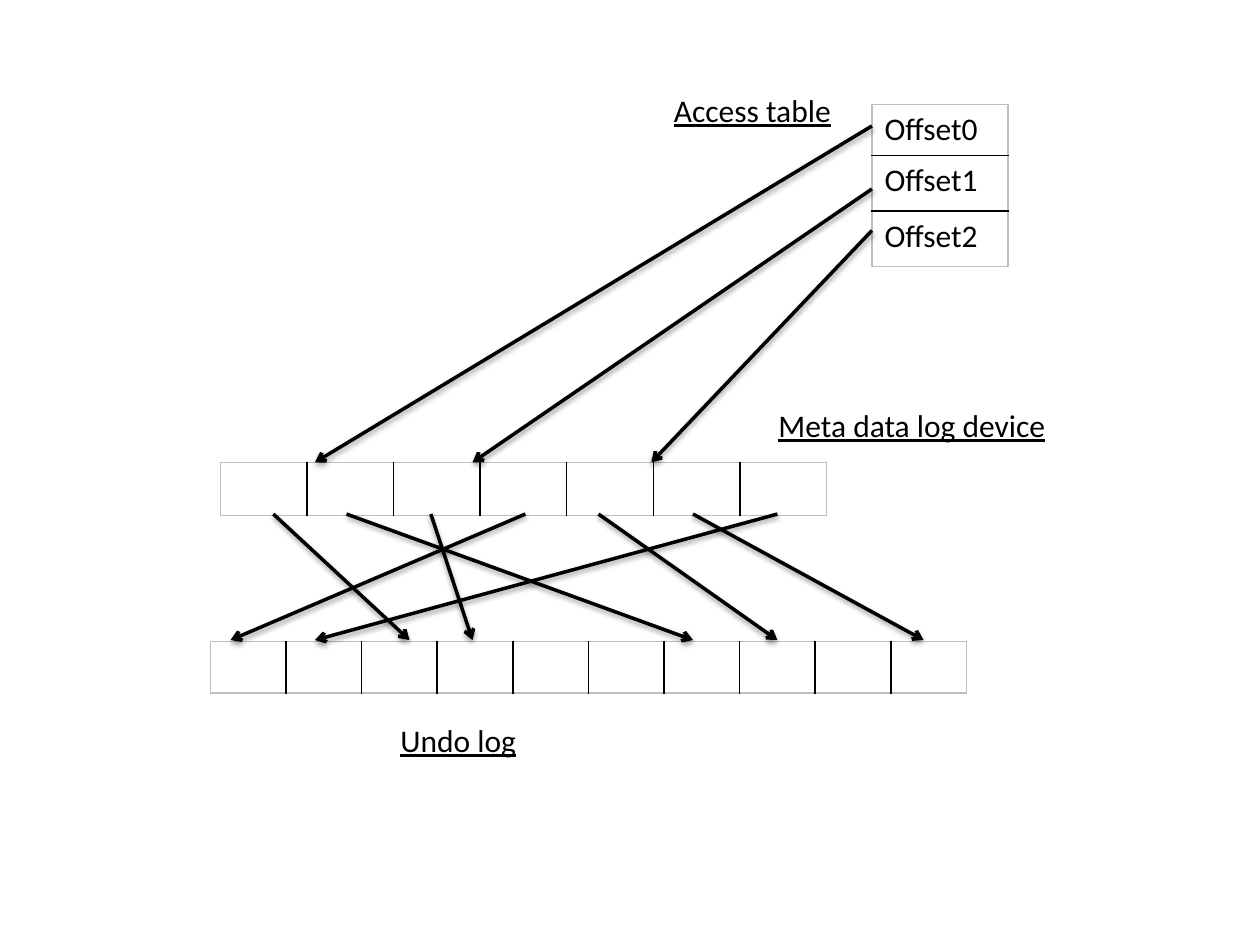
from dataclasses import dataclass

from lxml.etree import SubElement
from pptx import Presentation
from pptx.dml.color import RGBColor
from pptx.enum.shapes import MSO_CONNECTOR
from pptx.oxml import parse_xml
from pptx.oxml.ns import nsdecls, qn
from pptx.util import Inches, Pt


@dataclass(frozen=True)
class Theme:
    font: str = "Calibri"
    size: int = 18
    ink: str = "000000"
    frame: str = "BFBFBF"
    border_width: float = 1
    arrow_width: float = 2


@dataclass(frozen=True)
class Grid:
    left: float
    top: float
    col_width: float
    cols: int
    row_heights: tuple[float, ...]
    labels: tuple[str, ...] = ()


@dataclass(frozen=True)
class Label:
    text: str
    left: float
    top: float
    width: float
    height: float = 0.4


@dataclass(frozen=True)
class Arrow:
    x1: float
    y1: float
    x2: float
    y2: float


THEME = Theme()

ACCESS_TABLE = Grid(6.92, 0.83, 1.08, 1, (0.4, 0.44, 0.44),
                    ("Offset0", "Offset1", "Offset2"))
META_LOG = Grid(1.75, 3.67, 4.81 / 7, 7, (0.42,))
UNDO_LOG = Grid(1.67, 5.09, 0.6, 10, (0.41,))

LABELS = (
    Label("Undo log", 3.08, 5.67, 1.13),
    Label("Meta data log device", 6.08, 3.17, 2.35),
    Label("Access table", 5.25, 0.67, 1.46),
)

# (y at the access table, x at the meta data log)
OFFSET_LINKS = ((1.83, 5.17), (1.5, 3.75), (1, 2.5))
# (x at the meta data log, x at the undo log)
UNDO_LINKS = ((2.17, 3.25), (2.75, 5.5), (3.42, 3.75), (4.17, 1.83),
              (4.75, 6.17), (5.5, 7.33), (6.17, 2.5))
META_BOTTOM, UNDO_TOP = 4.08, 5.08

ARROWS = (
    *(Arrow(ACCESS_TABLE.left, y, x, META_LOG.top) for y, x in OFFSET_LINKS),
    *(Arrow(a, META_BOTTOM, b, UNDO_TOP) for a, b in UNDO_LINKS),
)


def write(tf, text: str, *, underline: bool = False) -> None:
    r = tf.paragraphs[0].add_run()
    r.text = text
    r.font.name = THEME.font
    r.font.size = Pt(THEME.size)
    r.font.color.rgb = RGBColor.from_string(THEME.ink)
    if underline:
        r.font.underline = True


def set_borders(cell, colors: dict[str, str]) -> None:
    """Put border lines, keyed by side (L, R, T, B), ahead of the cell's fill."""
    tc_pr = cell._tc.get_or_add_tcPr()
    for i, (side, color) in enumerate(colors.items()):
        tc_pr.insert(i, parse_xml(
            f'<a:ln{side} {nsdecls("a")} w="{Pt(THEME.border_width)}">'
            f'<a:solidFill><a:srgbClr val="{color}"/></a:solidFill></a:ln{side}>'))


def add_grid(s, grid: Grid) -> None:
    rows = len(grid.row_heights)
    table = s.shapes.add_table(
        rows, grid.cols, Inches(grid.left), Inches(grid.top),
        Inches(grid.col_width * grid.cols), Inches(sum(grid.row_heights))).table
    table.first_row = table.horz_banding = False
    for col in table.columns:
        col.width = Inches(grid.col_width)
    for i, height in enumerate(grid.row_heights):
        table.rows[i].height = Inches(height)
        for j in range(grid.cols):
            cell = table.cell(i, j)
            cell.fill.background()
            outer = {"L": j == 0, "R": j == grid.cols - 1,
                     "T": i == 0, "B": i == rows - 1}
            set_borders(cell, {side: THEME.frame if edge else THEME.ink
                               for side, edge in outer.items()})
            if grid.labels:
                write(cell.text_frame, grid.labels[i])


def add_label(s, label: Label) -> None:
    tf = s.shapes.add_textbox(Inches(label.left), Inches(label.top),
                              Inches(label.width), Inches(label.height)).text_frame
    tf.word_wrap = False
    write(tf, label.text, underline=True)


def add_arrow(s, arrow: Arrow) -> None:
    line = s.shapes.add_connector(
        MSO_CONNECTOR.STRAIGHT, Inches(arrow.x1), Inches(arrow.y1),
        Inches(arrow.x2), Inches(arrow.y2))
    line.line.color.rgb = RGBColor.from_string(THEME.ink)
    line.line.width = Pt(THEME.arrow_width)
    SubElement(line.line._get_or_add_ln(), qn("a:tailEnd"), type="arrow")
    line._element.spPr.append(parse_xml(
        f'<a:effectLst {nsdecls("a")}>'
        f'<a:outerShdw blurRad="{Pt(3.1)}" dist="{Pt(1.6)}" dir="5400000" rotWithShape="0">'
        f'<a:srgbClr val="{THEME.ink}"><a:alpha val="38000"/></a:srgbClr>'
        '</a:outerShdw></a:effectLst>'))


def main() -> None:
    prs = Presentation()
    prs.slide_width, prs.slide_height = Inches(10), Inches(7.5)
    s = prs.slides.add_slide(prs.slide_layouts[6])
    for grid in (ACCESS_TABLE, META_LOG, UNDO_LOG):
        add_grid(s, grid)
    for arrow in ARROWS:
        add_arrow(s, arrow)
    for label in LABELS:
        add_label(s, label)
    prs.save("out.pptx")


if __name__ == "__main__":
    main()
